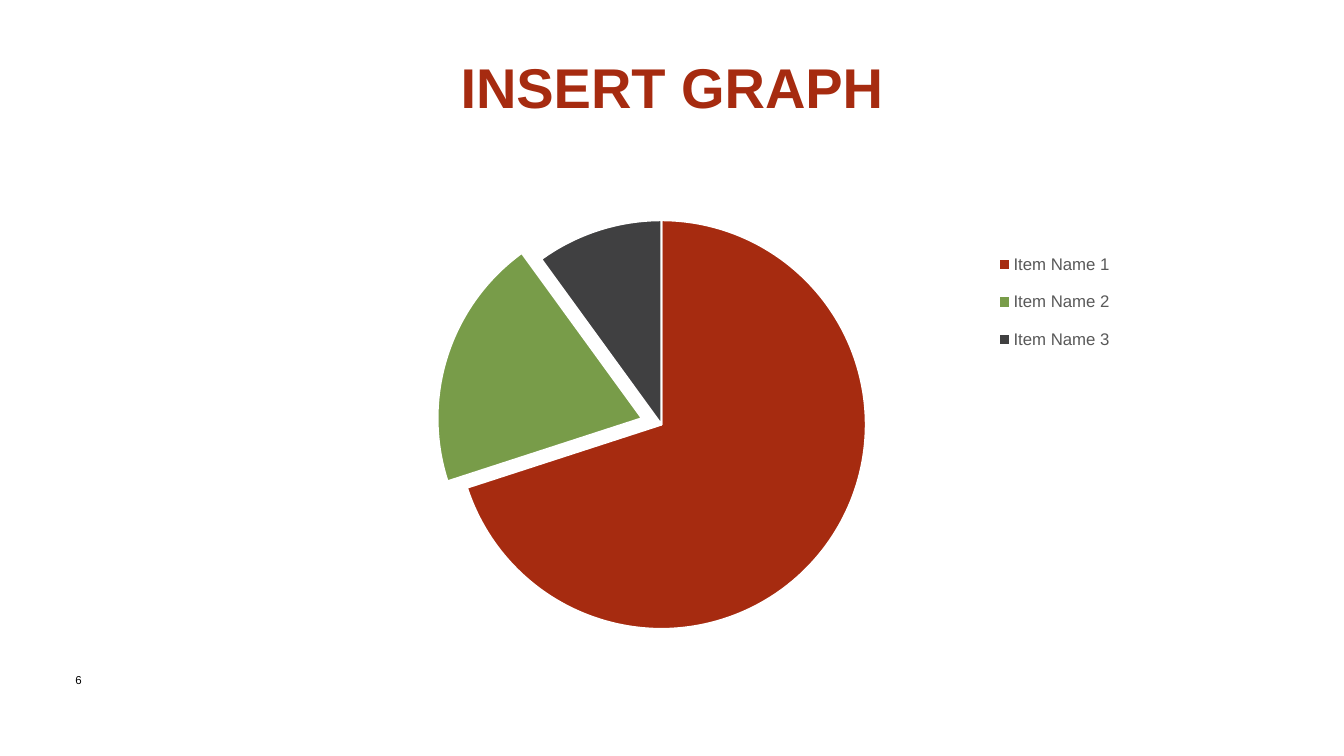
import pptx
import pptx.chart.data
import pptx.dml.color
import pptx.enum.chart
import pptx.enum.text
import pptx.oxml
import pptx.util
from pptx.util import Inches

FONT = "Arial"
COLORS = {"red": "A62B10", "green": "789C49", "charcoal": "404041",
          "legend": "595959", "black": "000000", "white": "FFFFFF"}
SHARES = [("Item Name 1", 70, "red"), ("Item Name 2", 20, "green"),
          ("Item Name 3", 10, "charcoal")]
PULLED_OUT = "Item Name 2"
CHART_BOX = (0.65, 1.83, 11.82, 5.07)


def rgb(name):
    return pptx.dml.color.RGBColor.from_string(COLORS[name])


def style_font(font, size, color, bold=False):
    font.name = FONT
    font.size = pptx.util.Pt(size)
    font.bold = bold
    font.color.rgb = rgb(color)


def add_label(slide, text, box, size, color, bold=False, centred=False):
    frame = slide.shapes.add_textbox(*map(Inches, box)).text_frame
    frame.word_wrap = True
    frame.text = text
    if centred:
        frame.vertical_anchor = pptx.enum.text.MSO_ANCHOR.MIDDLE
        frame.paragraphs[0].alignment = pptx.enum.text.PP_ALIGN.CENTER
    style_font(frame.paragraphs[0].runs[0].font, size, color, bold)


def manual_layout(x, y, width, height, inner=False):
    """Build a c:layout element from fractions of the chart's size."""
    target = '<c:layoutTarget val="inner"/>' if inner else ""
    sizes = "".join(f'<c:{tag} val="{value}"/>' for tag, value in
                    zip("xywh", (x, y, width, height)))
    return pptx.oxml.parse_xml(
        '<c:layout xmlns:c="http://schemas.openxmlformats.org/drawingml/2006/chart">'
        f'<c:manualLayout>{target}<c:xMode val="edge"/><c:yMode val="edge"/>'
        f'{sizes}</c:manualLayout></c:layout>')


def set_layout(element, layout, position):
    for old in element.findall(layout.tag):
        element.remove(old)
    element.insert(position, layout)


def add_share_pie(slide):
    data = pptx.chart.data.CategoryChartData()
    data.categories = [name for name, _, _ in SHARES]
    data.add_series("Series 1", [share for _, share, _ in SHARES])
    chart = slide.shapes.add_chart(pptx.enum.chart.XL_CHART_TYPE.PIE,
                                   *map(Inches, CHART_BOX), data).chart
    style_font(chart.font, 10, "black")
    chart.has_title = False
    pie = chart.plots[0]
    pie.vary_by_categories = True

    for index, (name, _, color) in enumerate(SHARES):
        point = pie.series[0].points[index]
        point.format.fill.solid()
        point.format.fill.fore_color.rgb = rgb(color)
        point.format.line.color.rgb = rgb("white")
        point.format.line.width = pptx.util.Pt(1.5)
        if name == PULLED_OUT:
            fill = point.format.fill._xPr
            fill.addprevious(pptx.oxml.parse_xml(
                '<c:explosion xmlns:c="http://schemas.openxmlformats.org/'
                'drawingml/2006/chart" val="10"/>'))

    chart.has_legend = True
    legend = chart.legend
    legend.position = pptx.enum.chart.XL_LEGEND_POSITION.RIGHT
    legend.include_in_layout = False
    style_font(legend.font, 12, "legend")
    set_layout(legend._element, manual_layout(0.77, 0.1, 0.12, 0.26), 1)
    plot_area = chart._chartSpace.chart.plotArea
    set_layout(plot_area, manual_layout(0.32, 0.07, 0.36, 0.8, inner=True), 0)


def main():
    deck = pptx.Presentation()
    deck.slide_width, deck.slide_height = Inches(13.33), Inches(7.5)
    slide = deck.slides.add_slide(deck.slide_layouts[6])
    add_label(slide, "6", (0.65, 6.63, 0.58, 0.54), 8.2, "black")
    add_label(slide, "INSERT GRAPH", (2.48, 0.52, 8.37, 0.67), 40, "red",
              bold=True, centred=True)
    add_share_pie(slide)
    deck.save("out.pptx")


if __name__ == "__main__":
    main()
